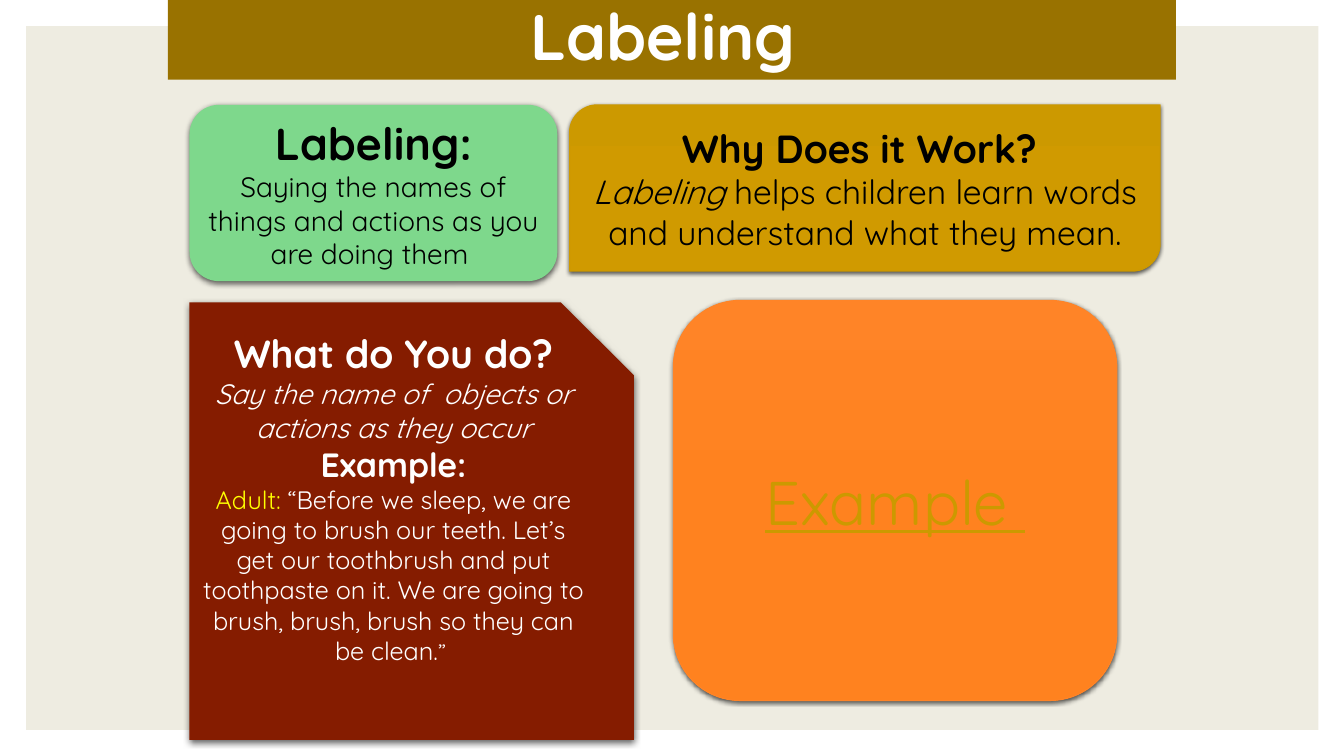
from dataclasses import dataclass

from lxml.etree import SubElement
from pptx import Presentation
from pptx.dml.color import RGBColor
from pptx.enum.shapes import MSO_SHAPE as Preset
from pptx.enum.text import MSO_ANCHOR as Anchor, MSO_AUTO_SIZE as AutoSize, PP_ALIGN as Align
from pptx.oxml.ns import qn
from pptx.util import Emu, Inches, Pt

FONT = "Quicksand"
BLACK, WHITE, YELLOW, GOLD = "000000", "FFFFFF", "FFFF00", "CC9900"
WIDTH, HEIGHT = Inches(13.333), Inches(7.5)


@dataclass(frozen=True)
class Area:
    """Shares of the slide's width and height, in percent."""
    left: float
    top: float
    width: float
    height: float


@dataclass(frozen=True)
class Span:
    text: str
    size: float
    color: str = BLACK
    bold: bool = False
    italic: bool = False
    underline: bool = False


@dataclass(frozen=True)
class Card:
    preset: Preset
    area: Area
    fills: tuple[str, ...]
    paragraphs: tuple[tuple[Span, ...], ...]
    adjustments: tuple[float, ...] = (0.167,)
    line: str = ""
    blur: float = 4.5
    distance: float = 1.5
    bottom_inset: float = 0.05


CARDS = (
    Card(
        Preset.ROUNDED_RECTANGLE, Area(14.1, 13.87, 27.37, 23.33), ("7ED88C",),
        ((Span("Labeling:", 32, bold=True),),
         (Span("Saying the names of things and actions as you are doing them ", 20),)),
    ),
    Card(
        Preset.ROUND_2_DIAG_RECTANGLE, Area(42.38, 13.87, 43.95, 22),
        (GOLD, "D09A00", "CF9900"),
        ((Span("Why Does it Work? ", 28, bold=True),),
         (Span("Labeling ", 24, italic=True),
          Span("helps children learn words and understand what they mean.", 24))),
        adjustments=(0.167, 0), line=GOLD, blur=3, distance=1,
    ),
    Card(
        Preset.SNIP_1_RECTANGLE, Area(14.1, 40, 33.07, 57.87), ("851C00",),
        ((Span("What do You do?", 28, WHITE, bold=True),),
         (Span("Say the name of  objects or actions as they occur", 20, WHITE, italic=True),),
         (Span("Example:", 24, WHITE, bold=True),),
         (Span("Adult: ", 18, YELLOW),
          Span("“Before we sleep, we are going to brush our teeth. Let’s get our "
               "toothbrush and put toothpaste on it. We are going to brush, brush, "
               "brush so they can be clean.", 18, WHITE),
          Span("” ", 16, WHITE))),
        bottom_inset=0.88,
    ),
    Card(
        Preset.ROUNDED_RECTANGLE, Area(50.1, 39.73, 33, 52.93),
        ("FF8427", "FF821F", "FF811F"),
        ((Span("Example ", 44, GOLD, underline=True),),),
        line="FF8427", blur=3, distance=1,
    ),
)


def rgb(color: str) -> RGBColor:
    return RGBColor.from_string(color)


def place(box, area: Area) -> None:
    box.left, box.top = Emu(int(WIDTH * area.left / 100)), Emu(int(HEIGHT * area.top / 100))
    box.width, box.height = Emu(int(WIDTH * area.width / 100)), Emu(int(HEIGHT * area.height / 100))


def paint(box, fills: tuple[str, ...]) -> None:
    if len(fills) == 1:
        box.fill.solid()
        box.fill.fore_color.rgb = rgb(fills[0])
        return
    box.fill.gradient()
    box.fill.gradient_angle = 270
    stops = box.element.spPr.find(".//" + qn("a:gsLst"))
    for stop in list(stops):
        stops.remove(stop)
    for index, color in enumerate(fills):
        position = 100000 * index // (len(fills) - 1)
        stop = SubElement(stops, qn("a:gs"), pos=str(position))
        SubElement(stop, qn("a:srgbClr"), val=color)


def add_shape(page, preset: Preset, area: Area, fills: tuple[str, ...], line: str = ""):
    box = page.shapes.add_shape(preset, 0, 0, 0, 0)
    place(box, area)
    paint(box, fills)
    if line:
        box.line.color.rgb = rgb(line)
        box.line.width = Pt(0.75)
    else:
        box.line.fill.background()
    box.shadow.inherit = False
    return box


def cast_shadow(box, blur: float, distance: float) -> None:
    effects = box.element.spPr.find(qn("a:effectLst"))
    shadow = SubElement(
        effects, qn("a:outerShdw"), blurRad=str(Pt(blur)), dist=str(Pt(distance)),
        dir="5400000", algn="ctr", rotWithShape="0",
    )
    color = SubElement(shadow, qn("a:srgbClr"), val=BLACK)
    SubElement(color, qn("a:alpha"), val="63000")


def write(para, text: str, *, size: float, color: str, bold: bool = False,
          italic: bool = False, underline: bool = False) -> None:
    run = para.add_run()
    run.text = text
    font = run.font
    font.name, font.size = FONT, Pt(size)
    font.bold, font.italic, font.underline = bold, italic, underline
    font.color.rgb = rgb(color)


def set_frame(box, bottom_inset: float = 0.05):
    frame = box.text_frame
    frame.word_wrap = True
    frame.auto_size = AutoSize.NONE
    frame.vertical_anchor = Anchor.MIDDLE
    frame.margin_left = frame.margin_right = Inches(0.1)
    frame.margin_top, frame.margin_bottom = Inches(0.05), Inches(bottom_inset)
    return frame


def add_card(page, card: Card) -> None:
    box = add_shape(page, card.preset, card.area, card.fills, card.line)
    for index, value in enumerate(card.adjustments):
        box.adjustments[index] = value
    cast_shadow(box, card.blur, card.distance)
    frame = set_frame(box, card.bottom_inset)
    for index, spans in enumerate(card.paragraphs):
        para = frame.add_paragraph() if index else frame.paragraphs[0]
        para.alignment = Align.CENTER
        for span in spans:
            write(para, span.text, size=span.size, color=span.color, bold=span.bold,
                  italic=span.italic, underline=span.underline)


def add_title(page) -> None:
    title = page.shapes.title
    place(title, Area(12.5, 0, 75, 10.53))
    paint(title, ("997200",))
    para = set_frame(title).paragraphs[0]
    para.alignment = Align.CENTER
    para.line_spacing = 0.9
    write(para, "Labeling ", size=46, color=WHITE, bold=True)


def main() -> None:
    deck = Presentation()
    deck.slide_width, deck.slide_height = WIDTH, HEIGHT
    page = deck.slides.add_slide(deck.slide_layouts[5])
    panel = add_shape(page, Preset.RECTANGLE, Area(1.95, 3.47, 96.15, 93.07), ("EEECE1",))
    page.shapes.title.element.addprevious(panel.element)
    add_title(page)
    for card in CARDS:
        add_card(page, card)
    deck.save("out.pptx")


if __name__ == "__main__":
    main()
